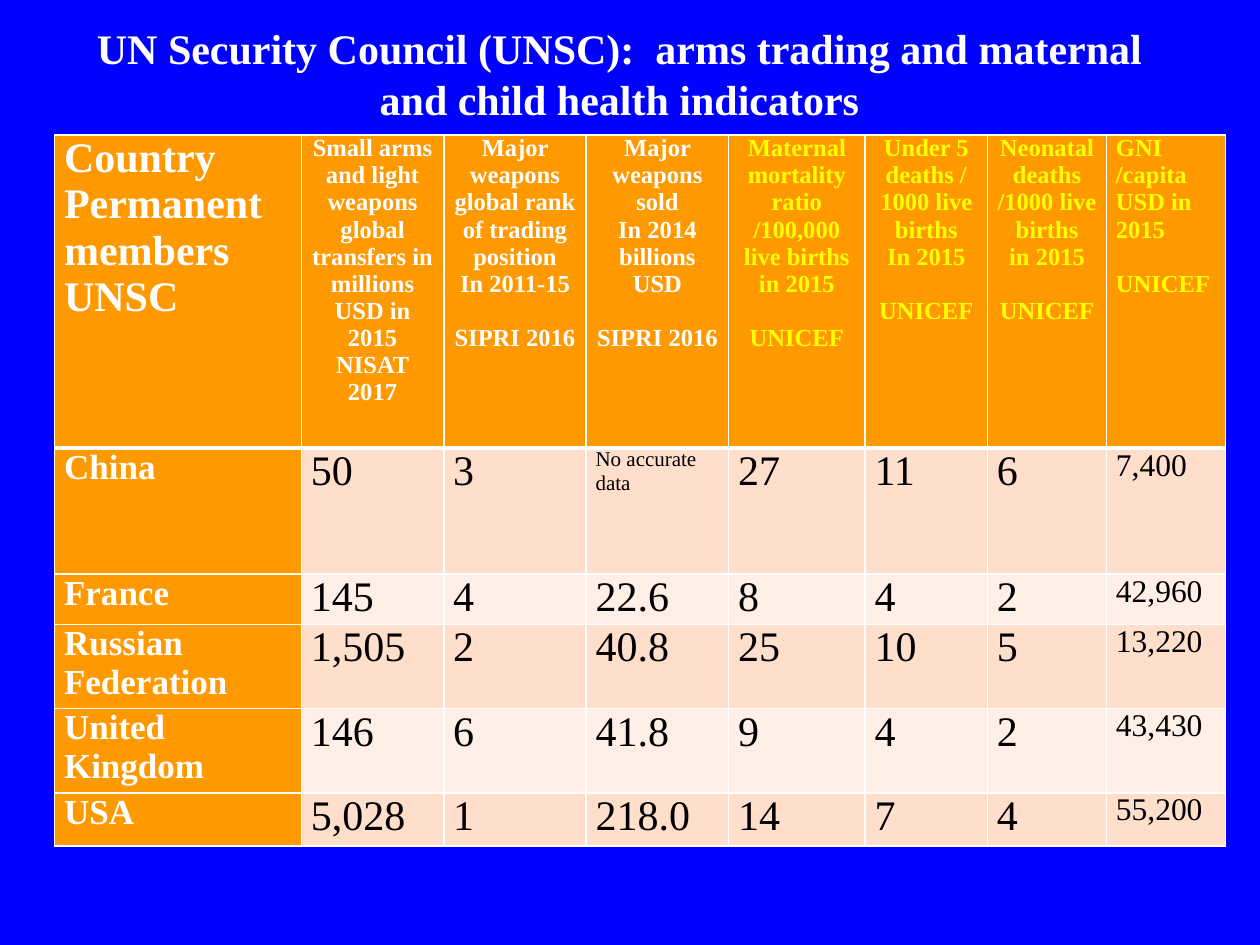
from pptx import Presentation
from pptx.dml.color import RGBColor as RGB
from pptx.enum.text import PP_ALIGN as Align
from pptx.oxml.xmlchemy import OxmlElement as Elem
from pptx.util import Pt

BLUE = RGB(0x00, 0x00, 0xFF)
WHITE = RGB(0xFF, 0xFF, 0xFF)
BLACK = RGB(0x00, 0x00, 0x00)
YELLOW = RGB(0xFF, 0xFF, 0x00)
ORANGE = RGB(0xFF, 0x99, 0x00)
BANDS = (RGB(0xFF, 0xDE, 0xCC), RGB(0xFF, 0xEF, 0xE7))
FONT = "Times New Roman"

TITLE = "UN Security Council (UNSC):  arms trading and maternal and child health indicators"
WIDTHS = (141, 81.4, 81.4, 81.4, 78, 70, 68, 68)
HEIGHTS = (179, 72, 26.5, 48, 44, 30.5)
HEADS = (
    "Country\nPermanent members UNSC",
    "Small arms and light weapons global transfers in millions USD in 2015\nNISAT 2017",
    "Major weapons global rank of trading position\nIn 2011-15\nSIPRI 2016",
    "Major weapons sold\nIn 2014\nbillions USD\nSIPRI 2016",
    "Maternal mortality ratio\n/100,000 live births in 2015\nUNICEF",
    "Under 5 deaths / 1000 live births\nIn 2015\nUNICEF",
    "Neonatal deaths\n/1000 live births\nin 2015\nUNICEF",
    "GNI /capita USD in 2015\nUNICEF",
)
ROWS = (
    ("China", "50", "3", "No accurate data", "27", "11", "6", "7,400"),
    ("France", "145", "4", "22.6", "8", "4", "2", "42,960"),
    ("Russian Federation", "1,505", "2", "40.8", "25", "10", "5", "13,220"),
    ("United Kingdom", "146", "6", "41.8", "9", "4", "2", "43,430"),
    ("USA", "5,028", "1", "218.0", "14", "7", "4", "55,200"),
)
LAST = len(WIDTHS) - 1


def write(frame, text, size, color, bold=False, align=Align.LEFT):
    frame.word_wrap = True
    frame.text = text
    for para in frame.paragraphs:
        para.alignment = align
        for run in para.runs:
            font = run.font
            font.name, font.size, font.bold = FONT, Pt(size), bold
            font.color.rgb = color


def add_title(slide):
    box = slide.shapes.add_textbox(Pt(48), Pt(9.5), Pt(612), Pt(437))
    write(box.text_frame, TITLE, 24, WHITE, True, Align.CENTER)
    box.text_frame.paragraphs[0].space_before = Pt(4.8)


def add_edges(cell, top, bottom):
    props = cell._tc.get_or_add_tcPr()
    for side, width in (("L", 1), ("R", 1), ("T", top), ("B", bottom)):
        line = Elem(f"a:ln{side}")
        line.set("w", str(Pt(width)))
        fill = Elem("a:solidFill")
        color = Elem("a:srgbClr")
        color.set("val", str(WHITE))
        fill.append(color)
        line.append(fill)
        props.append(line)


def style(cell, fill, top=1, bottom=1):
    cell.margin_left = cell.margin_right = Pt(5.4)
    cell.margin_top = cell.margin_bottom = 0
    add_edges(cell, top, bottom)
    cell.fill.solid()
    cell.fill.fore_color.rgb = fill


def fill_head(table):
    for col, text in enumerate(HEADS):
        cell = table.cell(0, col)
        style(cell, ORANGE, bottom=3)
        size = 24 if col == 0 else 14
        color = WHITE if col < 4 else YELLOW
        align = Align.LEFT if col in (0, LAST) else Align.CENTER
        write(cell.text_frame, text, size, color, True, align)
        # One line of space above the data source
        if col > 1:
            cell.text_frame.paragraphs[-1].space_before = Pt(15.5)


def fill_body(table):
    for row, values in enumerate(ROWS, 1):
        for col, text in enumerate(values):
            cell = table.cell(row, col)
            first = col == 0
            style(cell, ORANGE if first else BANDS[(row - 1) % 2],
                  top=3 if row == 1 else 1)
            if first:
                size = 20
            elif col == LAST:
                size = 18
            else:
                size = 12 if text.startswith("No") else 24
            write(cell.text_frame, text, size, WHITE if first else BLACK, first)


def add_grid(slide):
    table = slide.shapes.add_table(
        len(HEIGHTS), len(WIDTHS), Pt(31.2), Pt(77.1),
        Pt(sum(WIDTHS)), Pt(sum(HEIGHTS))).table
    for col, width in zip(table.columns, WIDTHS):
        col.width = Pt(width)
    for row, height in zip(table.rows, HEIGHTS):
        row.height = Pt(height)
    fill_head(table)
    fill_body(table)


def main():
    prs = Presentation()
    prs.slide_width, prs.slide_height = Pt(720), Pt(540)
    slide = prs.slides.add_slide(prs.slide_layouts[6])
    back = slide.background.fill
    back.solid()
    back.fore_color.rgb = BLUE

    # Heading, then the table of countries
    add_title(slide)
    add_grid(slide)
    prs.save("out.pptx")


if __name__ == "__main__":
    main()
